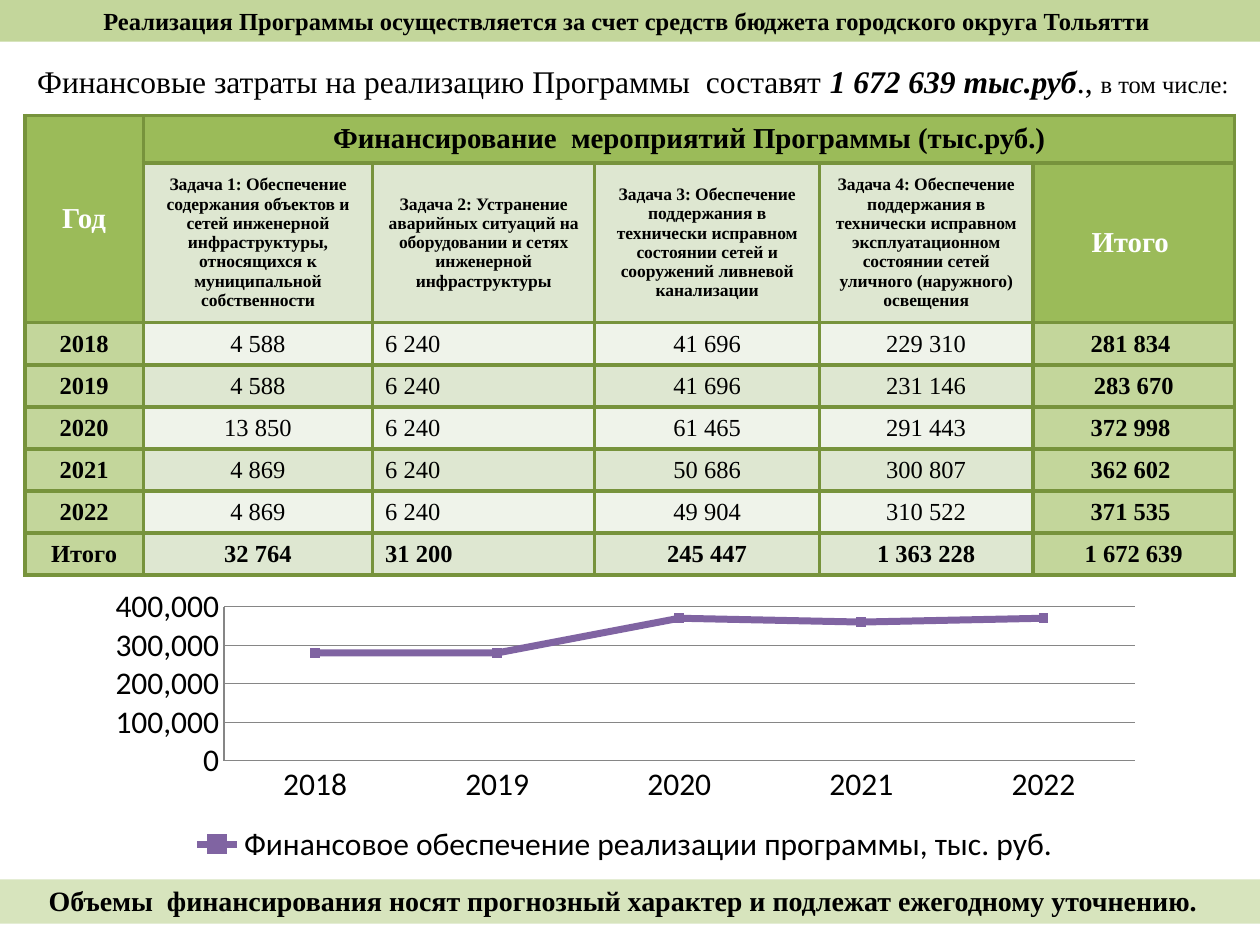
from lxml import etree
from pptx import Presentation
from pptx.chart.data import CategoryChartData as Data
from pptx.dml.color import RGBColor
from pptx.enum.chart import XL_CHART_TYPE as Kind, XL_LEGEND_POSITION as Spot
from pptx.enum.chart import XL_MARKER_STYLE as Mark, XL_TICK_MARK as Tick
from pptx.enum.shapes import MSO_SHAPE as Form
from pptx.enum.text import MSO_ANCHOR as Anchor, PP_ALIGN as Align
from pptx.oxml.ns import qn
from pptx.util import Cm, Pt

SERIF = "Times New Roman"
BLACK, WHITE = "000000", "FFFFFF"
DARK, GREEN, LIGHT, PALE = "77933C", "9BBB59", "C3D69B", "D7E4BD"
GREY, VIOLET = "868686", "8064A2"
BANDS = ["EFF3EA", "DEE7D1"]
YEARS = ["2018", "2019", "2020", "2021", "2022"]
TOTALS = [280000, 280000, 370000, 360000, 370000]
COLS = [2.39, 4.62, 4.48, 4.53, 4.3, 4.07]
ROWS = [0.76, 2.54] + [0.71] * 6
TASKS = [
    "Задача 1: Обеспечение содержания объектов и сетей инженерной "
    "инфраструктуры, относящихся к муниципальной собственности",
    "Задача 2: Устранение аварийных ситуаций на оборудовании и сетях "
    "инженерной инфраструктуры",
    "Задача 3: Обеспечение поддержания в технически исправном состоянии "
    "сетей и сооружений ливневой канализации",
    "Задача 4: Обеспечение поддержания в технически исправном "
    "эксплуатационном состоянии сетей уличного (наружного) освещения",
]
COSTS = [
    ["2018", "4 588", "6 240", "41 696", "229 310", "281 834 "],
    ["2019", "4 588", "6 240", "41 696", "231 146", "283 670"],
    ["2020", "13 850", "6 240", "61 465", "291 443", "372 998 "],
    ["2021", "4 869", "6 240", "50 686", "300 807", "362 602 "],
    ["2022", "4 869", "6 240", "49 904", "310 522", "371 535 "],
    ["Итого", "32 764", "31 200", "245 447", "1 363 228", "1 672 639"],
]


def hue(code):
    return RGBColor.from_string(code)


def paint(item, code):
    item.fill.solid()
    item.fill.fore_color.rgb = hue(code)


def write(para, text, size, bold=False, slant=False, code=BLACK):
    run = para.add_run()
    run.text = text
    font = run.font
    font.name, font.size = SERIF, Pt(size)
    font.bold, font.italic = bold, slant
    font.color.rgb = hue(code)


def place(shape, box):
    shape.left, shape.top, shape.width, shape.height = map(Cm, box)


def fill_bar(shape, box, text, size, code, pitch=None):
    place(shape, box)
    paint(shape, code)
    frame = shape.text_frame
    frame.word_wrap = True
    frame.vertical_anchor = Anchor.MIDDLE
    para = frame.paragraphs[0]
    para.alignment = Align.CENTER
    if pitch:
        para.line_spacing = Pt(pitch)
    write(para, text, size, True)


def add_foot(slide, box):
    bar = slide.shapes.add_shape(Form.RECTANGLE, *map(Cm, box))
    bar.shadow.inherit = False
    bar.line.fill.background()
    fill_bar(bar, box, "Объемы  финансирования носят прогнозный характер "
             "и подлежат ежегодному уточнению.  ", 16, PALE, 18)


def add_intro(slide, box):
    frame = slide.shapes.add_textbox(*map(Cm, box)).text_frame
    frame.word_wrap = True
    para = frame.paragraphs[0]
    para._p.get_or_add_pPr().set("indent", str(Cm(0.5)))
    write(para, "Финансовые затраты на реализацию Программы  составят ", 18)
    write(para, "1 672 639 тыс.руб", 18, True, True)
    write(para, "., ", 18)
    write(para, "в том числе:", 14)


def edge(cell):
    props = cell._tc.get_or_add_tcPr()
    for side in "LRTB":
        line = etree.SubElement(props, qn("a:ln" + side), w=str(Pt(2.25)))
        fill = etree.SubElement(line, qn("a:solidFill"))
        etree.SubElement(fill, qn("a:srgbClr"), val=DARK)


def set_cell(cell, text, size, back, bold=True, code=BLACK,
             align=Align.CENTER):
    paint(cell, back)
    cell.vertical_anchor = Anchor.MIDDLE
    para = cell.text_frame.paragraphs[0]
    para.alignment = align
    write(para, text, size, bold, code=code)


def add_costs(slide, box):
    grid = slide.shapes.add_table(len(ROWS), len(COLS), *map(Cm, box)).table
    for col, width in zip(grid.columns, COLS):
        col.width = Cm(width)
    for row, height in zip(grid.rows, ROWS):
        row.height = Cm(height)
    for cell in grid.iter_cells():
        edge(cell)
    grid.cell(0, 0).merge(grid.cell(1, 0))
    grid.cell(0, 1).merge(grid.cell(0, 5))
    set_cell(grid.cell(0, 0), "Год", 16.5, GREEN, code=WHITE)
    set_cell(grid.cell(0, 1),
             "Финансирование  мероприятий Программы (тыс.руб.)", 16.5, GREEN)
    for c, task in enumerate(TASKS, 1):
        set_cell(grid.cell(1, c), task, 10, BANDS[1])
    set_cell(grid.cell(1, 5), "Итого ", 16.5, GREEN, code=WHITE)
    for r, row in enumerate(COSTS):
        for c, text in enumerate(row):
            side = c in (0, 5)
            set_cell(grid.cell(r + 2, c), text, 14,
                     LIGHT if side else BANDS[r % 2],
                     side or row is COSTS[-1],
                     align=Align.LEFT if c == 2 else Align.CENTER)


def add_trend(slide, box):
    data = Data(number_format="#,##0")
    data.categories = YEARS
    data.add_series("Финансовое обеспечение реализации программы, тыс. руб.",
                    TOTALS)
    chart = slide.shapes.add_chart(Kind.LINE_MARKERS, *map(Cm, box),
                                   data).chart
    chart.has_title = False
    chart.font.name, chart.font.size = "Calibri", Pt(18)
    chart.font.color.rgb = hue(BLACK)
    chart.has_legend = True
    chart.legend.position = Spot.BOTTOM
    chart.legend.include_in_layout = False
    val = chart.value_axis
    val.minimum_scale, val.maximum_scale, val.major_unit = 0, 400000, 100000
    val.tick_labels.number_format = "#,##0"
    val.tick_labels.number_format_is_linked = False
    for axis in (val, chart.category_axis):
        axis.major_tick_mark = axis.minor_tick_mark = Tick.NONE
        axis.format.line.color.rgb = hue(GREY)
    val.major_gridlines.format.line.color.rgb = hue(GREY)
    plot = chart.plots[0]
    plot.vary_by_categories = False
    line = plot.series[0]
    line.smooth = False
    line.format.line.width = Pt(4)
    line.format.line.color.rgb = hue(VIOLET)
    line.marker.style, line.marker.size = Mark.SQUARE, 5
    paint(line.marker.format, VIOLET)
    line.marker.format.line.color.rgb = hue(VIOLET)


def main():
    deck = Presentation()
    deck.slide_width, deck.slide_height = Cm(25.4), Cm(19.05)
    slide = deck.slides.add_slide(deck.slide_layouts[5])
    fill_bar(slide.shapes.title, (0, 0, 25.4, 0.84),
             "Реализация Программы осуществляется за счет средств бюджета "
             "городского округа Тольятти ", 14, LIGHT)
    add_intro(slide, (0, 1.12, 25.4, 1.02))
    add_costs(slide, (0.5, 2.33, sum(COLS), sum(ROWS)))
    add_trend(slide, (1.9, 11.73, 21.4, 5.8))
    add_foot(slide, (0, 17.73, 25.4, 0.89))
    deck.save("out.pptx")


if __name__ == "__main__":
    main()
